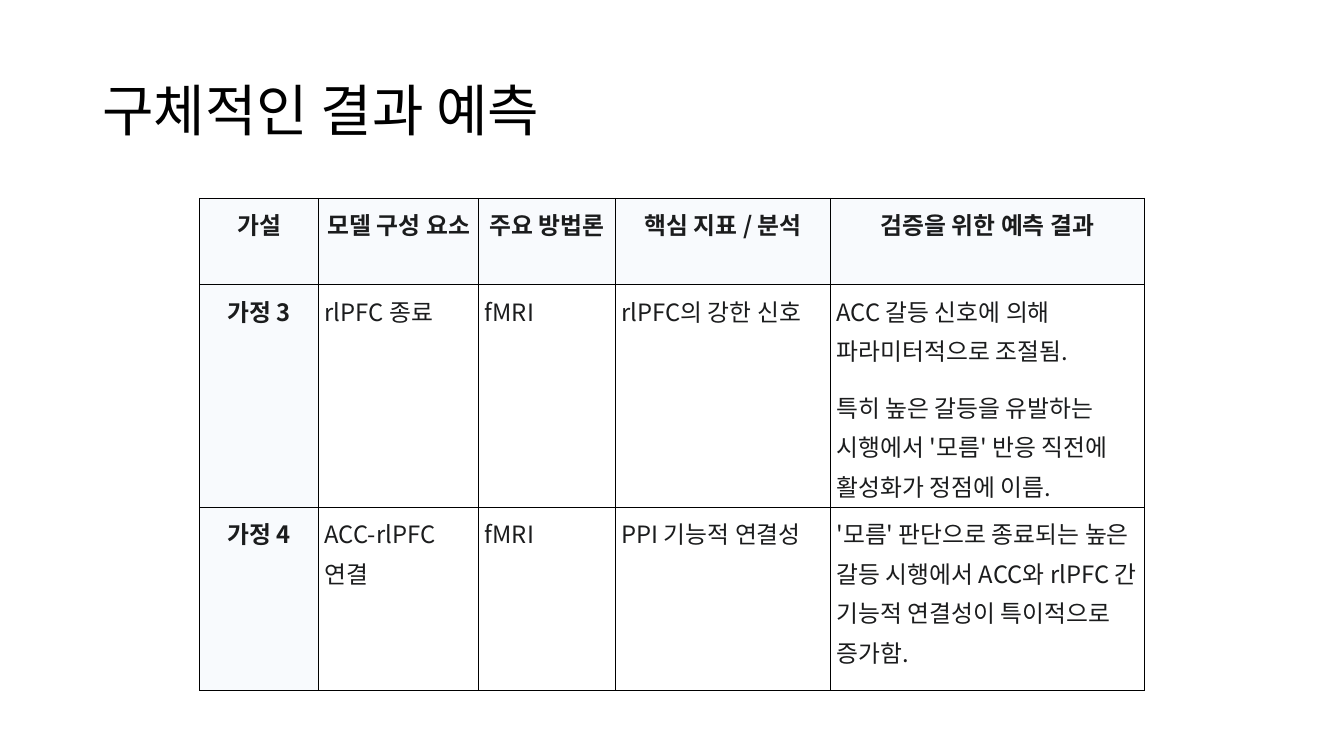
"""Build a slide with a table of predicted results for two hypotheses."""
from lxml.etree import SubElement
from pptx import Presentation
from pptx.dml.color import RGBColor
from pptx.enum.text import MSO_ANCHOR as Anchor, PP_ALIGN as Align
from pptx.oxml.ns import qn
from pptx.util import Cm, Pt

TITLE = "구체적인 결과 예측"
HEADINGS = ["가설", "모델 구성 요소", "주요 방법론", "핵심 지표 / 분석", "검증을 위한 예측 결과"]
HYPOTHESES = [
    ["가정 3", "rlPFC 종료", "fMRI", "rlPFC의 강한 신호",
     "ACC 갈등 신호에 의해 파라미터적으로 조절됨.\n"
     "특히 높은 갈등을 유발하는 시행에서 '모름' 반응 직전에 활성화가 정점에 이름."],
    ["가정 4", "ACC-rlPFC 연결", "fMRI", "PPI 기능적 연결성",
     "'모름' 판단으로 종료되는 높은 갈등 시행에서 ACC와 rlPFC 간 "
     "기능적 연결성이 특이적으로 증가함."],
]
COLORS = {"title": "000000", "text": "1B1C1D", "header": "F8FAFD", "border": "000000"}
FONT = "Noto Sans CJK KR"
COLUMN_WIDTHS = [Cm(3), Cm(4.04), Cm(3.44), Cm(5.42), Cm(7.91)]
ROW_HEIGHTS = [Cm(2.18), Cm(5.23), Cm(4.63)]
TITLE_BOX = {"left": Cm(2.33), "top": Cm(1.01), "width": Cm(29.21), "height": Cm(3.68)}
CELL_MARGINS = {"margin_left": Cm(0.15), "margin_right": Cm(0.15),
                "margin_top": Cm(0.1), "margin_bottom": Cm(0.1)}
TABLE_FLAGS = {"first_row": False, "horz_banding": False}


def apply(target, values):
    """Set each attribute of the target from a dict."""
    for name, value in values.items():
        setattr(target, name, value)


def style_paragraph(paragraph, spacing, size, color, bold):
    """Format a paragraph and its runs."""
    apply(paragraph, spacing)
    for run in paragraph.runs:
        apply(run.font, {"size": Pt(size), "bold": bold, "name": FONT})
        run.font.color.rgb = RGBColor.from_string(COLORS[color])
        SubElement(run._r.get_or_add_rPr(), qn("a:ea"), typeface=FONT)


def add_borders(cell):
    """Draw a thin line on all four sides of a cell."""
    properties = cell._tc.get_or_add_tcPr()
    for side in ("L", "R", "T", "B"):
        line = SubElement(properties, qn(f"a:ln{side}"), w=str(Pt(0.75)))
        fill = SubElement(line, qn("a:solidFill"))
        SubElement(fill, qn("a:srgbClr"), val=COLORS["border"])


def fill_cell(cell, text, is_header):
    """Write one table cell with its fill and borders."""
    cell.text = text
    apply(cell, CELL_MARGINS)
    add_borders(cell)
    if is_header:
        cell.fill.solid()
        cell.fill.fore_color.rgb = RGBColor.from_string(COLORS["header"])
    else:
        cell.fill.background()
    paragraphs = cell.text_frame.paragraphs
    for number, paragraph in enumerate(paragraphs, 1):
        spacing = {"alignment": Align.CENTER if is_header else Align.LEFT,
                   "line_spacing": 1.14, "space_before": Pt(12),
                   "space_after": Pt(12 if number == len(paragraphs) else 0)}
        style_paragraph(paragraph, spacing, 17, "text", is_header)


def add_title(slide):
    """Place and format the title."""
    title = slide.shapes.title
    apply(title, TITLE_BOX)
    title.text_frame.text = TITLE
    title.text_frame.vertical_anchor = Anchor.MIDDLE
    spacing = {"alignment": Align.LEFT, "line_spacing": 0.9}
    style_paragraph(title.text_frame.paragraphs[0], spacing, 40, "title", False)


def add_predictions(slide):
    """Add the table of hypotheses and predictions."""
    rows = [HEADINGS, *HYPOTHESES]
    table = slide.shapes.add_table(len(rows), len(HEADINGS), Cm(5.03), Cm(5),
                                   sum(COLUMN_WIDTHS), sum(ROW_HEIGHTS)).table
    apply(table, TABLE_FLAGS)
    for column, width in zip(table.columns, COLUMN_WIDTHS):
        column.width = width
    for row, height in zip(table.rows, ROW_HEIGHTS):
        row.height = height
    for r, texts in enumerate(rows):
        for c, text in enumerate(texts):
            fill_cell(table.cell(r, c), text, r == 0 or c == 0)


def main():
    """Create and save the presentation."""
    deck = Presentation()
    apply(deck, {"slide_width": Cm(33.87), "slide_height": Cm(19.05)})
    slide = deck.slides.add_slide(deck.slide_layouts.get_by_name("Title Only"))
    add_title(slide)
    add_predictions(slide)
    deck.save("out.pptx")


if __name__ == "__main__":
    main()
